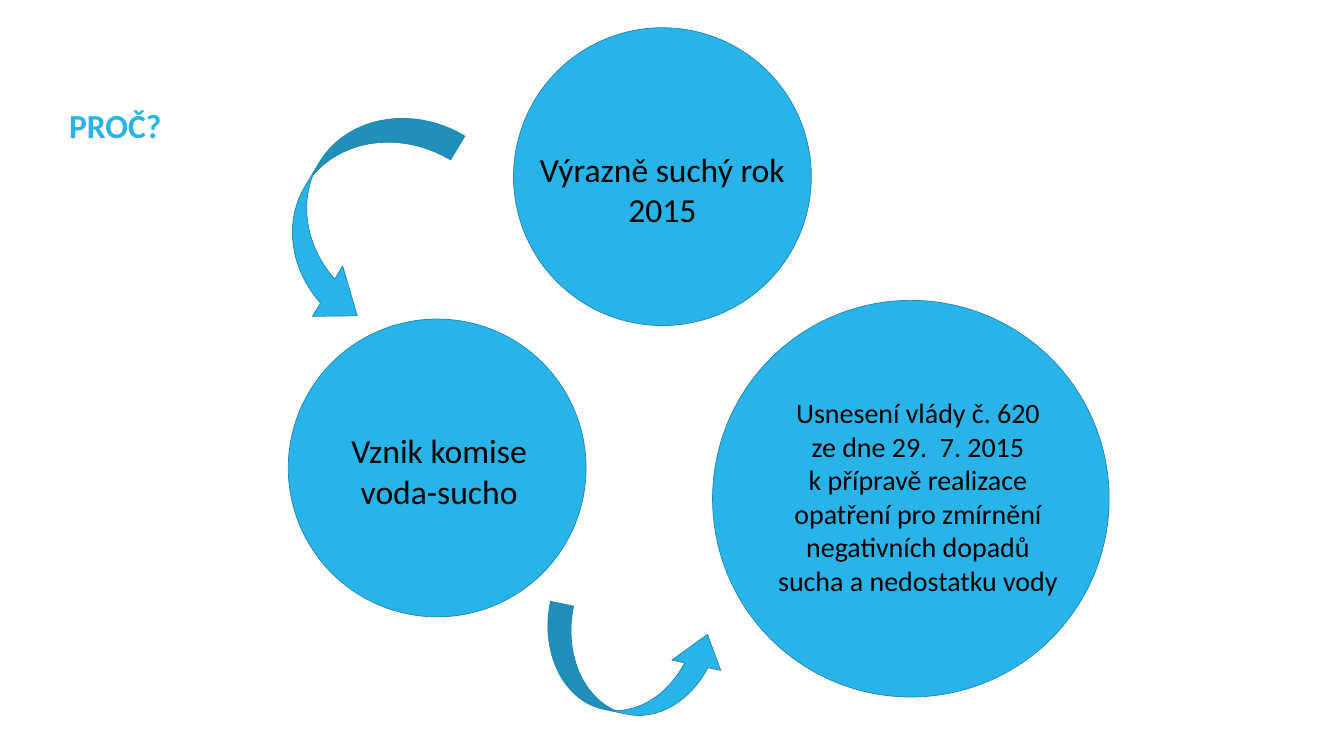
import pptx
import pptx.util
import pptx.dml.color
import pptx.enum.shapes
import pptx.enum.text

Inches = pptx.util.Inches
Pt = pptx.util.Pt
RGBColor = pptx.dml.color.RGBColor
SHAPE = pptx.enum.shapes.MSO_SHAPE
ALIGN = pptx.enum.text.PP_ALIGN
ANCHOR = pptx.enum.text.MSO_ANCHOR

BLUE = RGBColor(0x29, 0xB4, 0xE9)
EDGE = RGBColor(0x1E, 0x85, 0xAC)
BLACK = RGBColor(0, 0, 0)


def add_run(para, text, size, color, bold=False):
    run = para.add_run()
    run.text = text
    font = run.font
    font.name = "Calibri"
    font.size = Pt(size)
    font.bold = bold
    font.color.rgb = color


def set_title(slide, text):
    title = slide.shapes.title
    title.left, title.top = Inches(1.37), Inches(2.17)
    title.width, title.height = Inches(23.94), Inches(1.34)
    frame = title.text_frame
    frame.margin_left = frame.margin_right = 0
    frame.margin_top = frame.margin_bottom = 0
    frame.vertical_anchor = ANCHOR.TOP
    frame.word_wrap = True
    para = frame.paragraphs[0]
    para.alignment = ALIGN.LEFT
    para.line_spacing = 0.9
    add_run(para, text, 48, BLUE, True)


def add_solid(slide, kind, left, top, width, height):
    shape = slide.shapes.add_shape(
        kind, Inches(left), Inches(top), Inches(width), Inches(height))
    shape.shadow.inherit = False
    shape.fill.solid()
    shape.fill.fore_color.rgb = BLUE
    shape.line.color.rgb = EDGE
    shape.line.width = Pt(1)
    return shape


def add_circle(slide, left, top, size):
    add_solid(slide, SHAPE.OVAL, left, top, size, size)


def add_arrow(slide, left, top, width, height, angle):
    """Add a curved arrow that bulges downward before it is turned."""
    arrow = add_solid(slide, SHAPE.CURVED_DOWN_ARROW, left, top, width, height)
    for index, value in enumerate((0.25, 0.528, 0.343)):
        arrow.adjustments[index] = value
    arrow.rotation = angle
    arrow._element.spPr.xfrm.set("flipV", "1")


def add_label(slide, left, top, width, height, size, lines):
    box = slide.shapes.add_textbox(
        Inches(left), Inches(top), Inches(width), Inches(height))
    frame = box.text_frame
    frame.word_wrap = True
    frame.auto_size = pptx.enum.text.MSO_AUTO_SIZE.SHAPE_TO_FIT_TEXT
    for index, line in enumerate(lines):
        para = frame.add_paragraph() if index else frame.paragraphs[0]
        para.alignment = ALIGN.CENTER
        add_run(para, line, size, BLACK)


def main():
    deck = pptx.Presentation()
    deck.slide_width, deck.slide_height = Inches(26.67), Inches(15)
    slide = deck.slides.add_slide(deck.slide_layouts.get_by_name("Title Only"))
    set_title(slide, "PROČ?")

    add_circle(slide, 5.72, 6.33, 5.91)
    add_circle(slide, 10.19, 0.55, 5.91)
    add_circle(slide, 14.14, 5.96, 7.87)

    add_label(slide, 10.36, 2.9, 5.57, 1.72, 48, ["Výrazně suchý rok 2015"])
    add_label(slide, 6.63, 8.49, 4.17, 1.72, 48, ["Vznik komise voda-sucho"])
    add_label(slide, 15.26, 7.8, 5.91, 4.44, 40, [
        "Usnesení vlády č. 620",
        "ze dne 29.  7. 2015",
        "k přípravě realizace opatření pro zmírnění "
        "negativních dopadů sucha a nedostatku vody",
    ])

    add_arrow(slide, 4.69, 3.06, 4.74, 2.21, 120.9)
    add_arrow(slide, 10.69, 12.29, 3.68, 1.88, 11.9)
    deck.save("out.pptx")


if __name__ == "__main__":
    main()
